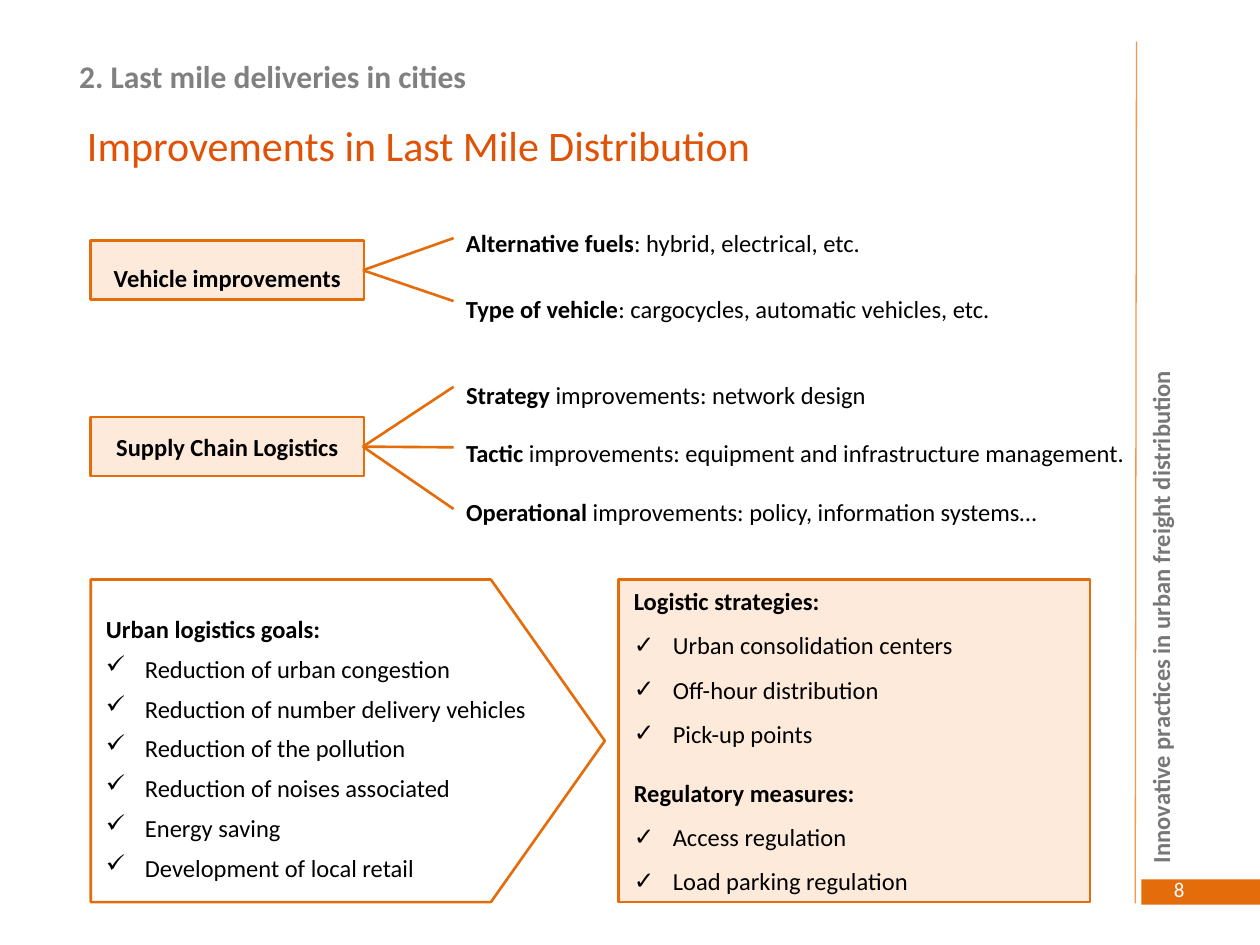
import pptx
import pptx.util
import pptx.dml.color
import pptx.enum.shapes
import pptx.enum.text
import pptx.oxml.ns
import lxml.etree

Inches = pptx.util.Inches
Pt = pptx.util.Pt
Align = pptx.enum.text.PP_ALIGN
Anchor = pptx.enum.text.MSO_ANCHOR
Shape = pptx.enum.shapes.MSO_SHAPE
ORANGE, PEACH, WHITE, BLACK = "E46C0A", "FDEADA", "FFFFFF", "000000"
LEFT, LABEL_WIDTH, LABEL_HEIGHT = 0.72, 2.17, 0.47
BRANCH_LEFT, BRANCH_RIGHT = 2.88, 3.6
PANEL_TOP, PANEL_HEIGHT = 4.6, 2.56


def color(value):
    """Turn a hex string into a colour."""
    return pptx.dml.color.RGBColor.from_string(value)


def place(shape, box):
    """Move a shape to a left, top, width, height box in inches."""
    shape.left, shape.top, shape.width, shape.height = map(Inches, box)


def set_frame(shape, anchor=Anchor.TOP, insets=(0.1, 0.05, 0.1, 0.05), wrap=True):
    """Set the anchor, insets and wrapping of a shape's text."""
    frame = shape.text_frame
    frame.auto_size = pptx.enum.text.MSO_AUTO_SIZE.NONE
    frame.word_wrap, frame.vertical_anchor = wrap, anchor
    frame.margin_left, frame.margin_top, frame.margin_right, frame.margin_bottom = map(Inches, insets)
    return frame


def add_para(frame, pieces, size=14, fill=BLACK, align=Align.LEFT, spacing=1, before=0, bullet=None):
    """Add a paragraph of (text, bold) pieces, using the empty first one if free."""
    para = frame.paragraphs[0]
    if para.runs:
        para = frame.add_paragraph()
    para.alignment, para.line_spacing, para.space_before = align, spacing, Pt(before)
    properties = para._p.get_or_add_pPr()
    indent = Inches(0.31) if bullet else 0
    properties.set("marL", str(indent))
    properties.set("indent", str(-indent))
    mark = lxml.etree.SubElement(properties, pptx.oxml.ns.qn("a:buChar" if bullet else "a:buNone"))
    if bullet:
        mark.set("char", bullet)
    for text, bold in pieces:
        span = para.add_run()
        span.text = text
        span.font.name, span.font.size, span.font.bold = "Calibri", Pt(size), bold
        span.font.color.rgb = color(fill)


def paint(shape, fill, line=ORANGE):
    """Give a shape its fill and outline."""
    shape.fill.solid()
    shape.fill.fore_color.rgb = color(fill)
    if line:
        shape.line.color.rgb = color(line)
        shape.line.width = Pt(1.5)
    else:
        shape.line.fill.background()


def add_panel(page, box, fill, line=ORANGE, kind=Shape.RECTANGLE):
    """Add a flat filled shape."""
    panel = page.shapes.add_shape(kind, *map(Inches, box))
    panel.shadow.inherit = False
    paint(panel, fill, line)
    return panel


def add_text(page, box, pieces, anchor=Anchor.TOP, insets=(0.1, 0.05, 0.1, 0.05), wrap=True, **style):
    """Add a text box holding one paragraph."""
    label = page.shapes.add_textbox(*map(Inches, box))
    add_para(set_frame(label, anchor, insets, wrap), pieces, **style)
    return label


def add_line(page, start, end, stroke=ORANGE, width=1.5):
    """Add a straight connector without a shadow."""
    line = page.shapes.add_connector(
        pptx.enum.shapes.MSO_CONNECTOR.STRAIGHT, *map(Inches, start + end))
    line.line.color.rgb = color(stroke)
    line.line.width = Pt(width)
    lxml.etree.SubElement(line._element.spPr, pptx.oxml.ns.qn("a:effectLst"))


def add_margin(page):
    """Add the right-hand rule, running title and page number."""
    add_panel(page, (9.06, 6.98, 0.94, 0.2), ORANGE, None)
    running = add_text(page, (6.22, 3.78, 5.98, 0.16),
                       [("Innovative practices in urban freight distribution", True)],
                       Anchor.MIDDLE, (0, 0, 0, 0), fill="777777")
    running.rotation = 270
    add_line(page, (9.02, 0.33), (9.01, 7.17), "F79646", 0.75)
    add_text(page, (7.17, 6.83, 2.33, 0.45), [("8", False)], Anchor.MIDDLE,
             size=12, fill=WHITE, align=Align.RIGHT)


def add_heading(page):
    """Add the section name and the slide title."""
    add_text(page, (0.53, 0.4, 3.3, 0.4), [("2. Last mile deliveries in cities", True)],
             wrap=False, size=18, fill="808080")
    title = page.shapes.title
    place(title, (0.59, 0.9, 6.75, 0.5))
    add_para(set_frame(title), [("Improvements in Last Mile Distribution", False)],
             size=24, fill="E05206")


def add_branch(page, top, text, ends, spacing=1):
    """Add a labelled box with lines fanning out to the given heights."""
    box = add_panel(page, (LEFT, top, LABEL_WIDTH, LABEL_HEIGHT), PEACH)
    frame = set_frame(box, Anchor.MIDDLE, (0.1, 0.1, 0.1, 0.1), False)
    add_para(frame, [(text, True)], align=Align.CENTER, spacing=spacing)
    for end in ends:
        add_line(page, (BRANCH_LEFT, top + LABEL_HEIGHT / 2), (BRANCH_RIGHT, end))


def add_vehicles(page):
    """Add the vehicle improvements branch."""
    add_branch(page, 1.91, "Vehicle improvements", (1.89, 2.39), 1.5)
    for top, width, name, detail in (
            (1.53, 4.7, "Alternative fuels", ": hybrid, electrical, etc."),
            (2.05, 5, "Type of vehicle", ": cargocycles, automatic vehicles, etc.")):
        add_text(page, (BRANCH_RIGHT, top, width, 0.57), [(name, True), (detail, False)], spacing=2)


def add_supply_chain(page):
    """Add the supply chain logistics branch."""
    add_branch(page, 3.31, "Supply Chain Logistics", (3.07, 3.55, 4.04))
    label = page.shapes.add_textbox(*map(Inches, (BRANCH_RIGHT, 2.73, 5.68, 1.51)))
    frame = set_frame(label)
    for name, detail in (
            ("Strategy", " improvements: network design"),
            ("Tactic", " improvements: equipment and infrastructure management."),
            ("Operational", " improvements: policy, information systems…")):
        add_para(frame, [(name, True), (detail, False)], spacing=2)


def add_checklist(frame, heading, items, heading_style, item_style):
    """Add a bold heading followed by ticked items."""
    add_para(frame, [(heading, True)], **heading_style)
    for item in items:
        add_para(frame, [(item, False)], bullet="✓", **item_style)


def add_goals(page, box):
    """Add the arrow-shaped panel of goals."""
    panel = add_panel(page, box, WHITE, kind=Shape.PENTAGON)
    panel.adjustments[0] = 0.353
    frame = set_frame(panel, Anchor.MIDDLE, (0.12, 0.05, 0.1, 0.05), False)
    add_checklist(frame, "Urban logistics goals:", (
        "Reduction of urban congestion", "Reduction of number delivery vehicles",
        "Reduction of the pollution", "Reduction of noises associated",
        "Energy saving", "Development of local retail"), {"spacing": 1.5}, {"before": 6})


def add_measures(page, box):
    """Fill the body placeholder with strategies and measures."""
    body = page.placeholders[1]
    place(body, box)
    paint(body, PEACH)
    frame = set_frame(body, Anchor.MIDDLE, (0.12, 0.05, 0.1, 0.05))
    items = {"align": Align.JUSTIFY, "spacing": 1.5}
    add_checklist(frame, "Logistic strategies:",
                  ("Urban consolidation centers", "Off-hour distribution", "Pick-up points"),
                  {"align": Align.JUSTIFY}, items)
    add_checklist(frame, "Regulatory measures:", ("Access regulation", "Load parking regulation"),
                  {"align": Align.JUSTIFY, "before": 17}, items)


def main():
    """Build and save the deck."""
    deck = pptx.Presentation()
    deck.slide_width, deck.slide_height = Inches(10), Inches(7.5)
    page = deck.slides.add_slide(deck.slide_layouts[1])
    add_margin(page)
    add_heading(page)
    add_vehicles(page)
    add_supply_chain(page)
    add_goals(page, (LEFT, PANEL_TOP, 4.08, PANEL_HEIGHT))
    add_measures(page, (4.91, PANEL_TOP, 3.74, PANEL_HEIGHT))
    deck.save("out.pptx")


if __name__ == "__main__":
    main()
